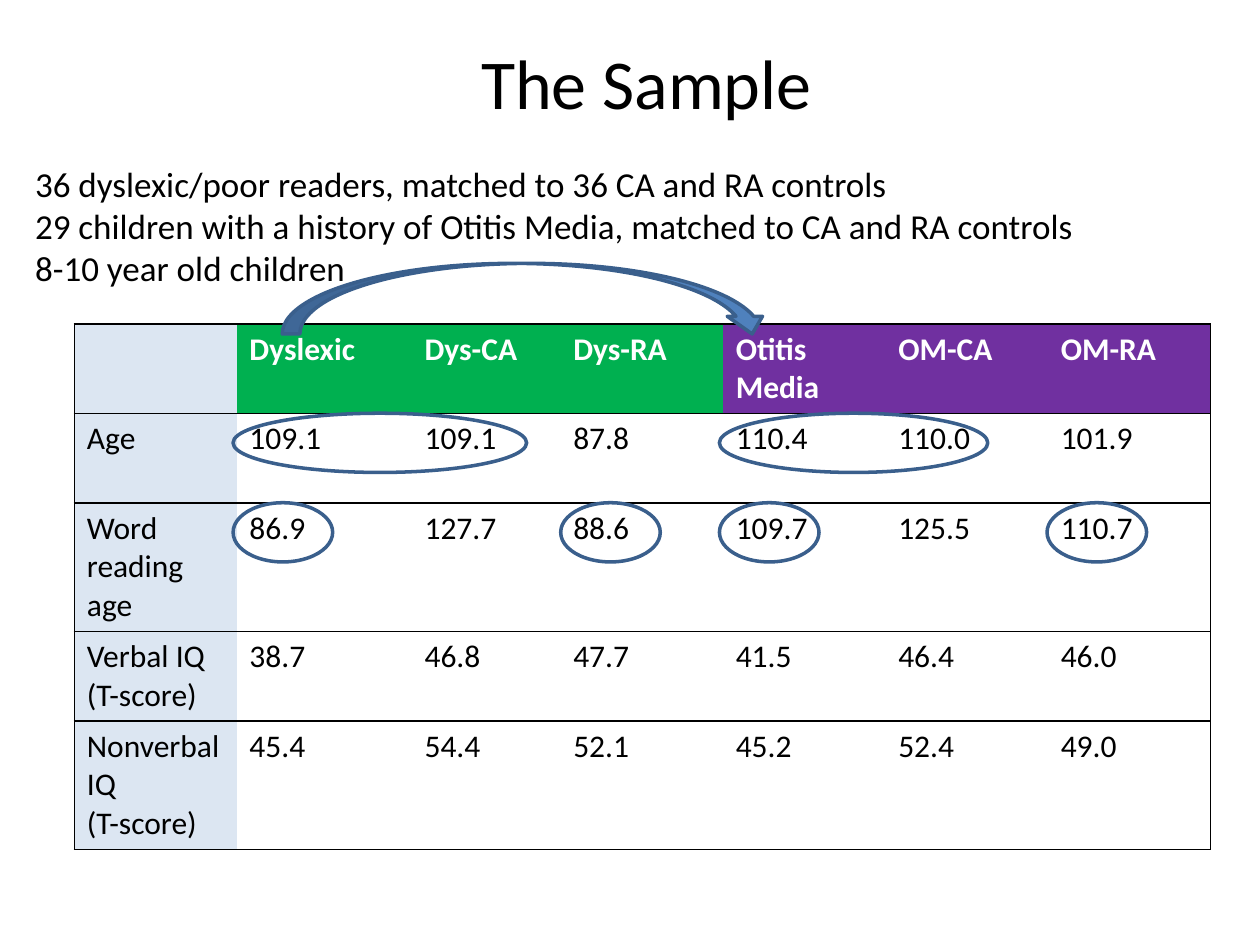
from dataclasses import dataclass
from itertools import accumulate

from lxml.etree import SubElement
from pptx import Presentation
from pptx.dml.color import RGBColor
from pptx.enum.shapes import MSO_SHAPE
from pptx.enum.text import MSO_ANCHOR, PP_ALIGN
from pptx.oxml.ns import qn
from pptx.util import Inches, Pt

WIDTH, HEIGHT = 10, 7.5
NO_GRID_STYLE = "{2D5ABB26-0587-4C30-8999-92F81FD0307C}"


@dataclass(frozen=True)
class Theme:
    font: str = "Calibri"
    ink: str = "000000"
    white: str = "FFFFFF"
    label: str = "DCE6F2"
    dyslexic: str = "00B050"
    otitis: str = "7030A0"
    outline: str = "3A5F8C"
    arrow: str = "4F81BD"
    title_size: int = 40
    body_size: int = 20
    table_size: int = 18
    border: int = 1
    outline_width: int = 2


@dataclass(frozen=True)
class Area:
    """A rectangle in percent of the slide's width and height."""
    left: float
    top: float
    width: float
    height: float

    def lengths(self) -> tuple:
        sides = (WIDTH, HEIGHT, WIDTH, HEIGHT)
        shares = (self.left, self.top, self.width, self.height)
        return tuple(Inches(side * share / 100) for side, share in zip(sides, shares))


@dataclass(frozen=True)
class Ring:
    """An ellipse around scores, placed by table row and column."""
    row: int
    column: int
    width: float = 0.79
    shift: float = -0.03


THEME = Theme()
TITLE_AREA = Area(6.3, 2.8, 90, 11.6)
INTRO_AREA = Area(1.8, 16.53, 97.9, 14.8)
ARROW_AREA = Area(22.4, 27.87, 38.7, 7.47)

INTRO = [
    "36 dyslexic/poor readers, matched to 36 CA and RA controls",
    "29 children with a history of Otitis Media, matched to CA and RA controls",
    "8-10 year old children",
]
ROWS = [
    ["", "Dyslexic", "Dys-CA", "Dys-RA", "Otitis Media", "OM-CA", "OM-RA"],
    ["Age", "109.1", "109.1", "87.8", "110.4", "110.0", "101.9"],
    ["Word reading age", "86.9", "127.7", "88.6", "109.7", "125.5", "110.7"],
    ["Verbal IQ\n(T-score)", "38.7", "46.8", "47.7", "41.5", "46.4", "46.0"],
    ["Nonverbal IQ\n(T-score)", "45.4", "54.4", "52.1", "45.2", "52.4", "49.0"],
]

# Table grid in inches: sizes, then the edges that follow from them
TABLE_LEFT, TABLE_TOP = 0.59, 2.57
COLUMN_WIDTHS = [1.29, 1.39, 1.18] + [1.29] * 4
ROW_HEIGHTS = [0.71, 0.71, 1.02, 0.71, 1.02]
COLUMN_EDGES = list(accumulate(COLUMN_WIDTHS, initial=TABLE_LEFT))
ROW_EDGES = list(accumulate(ROW_HEIGHTS, initial=TABLE_TOP))

RING_HEIGHT = 0.47
RINGS = [
    Ring(1, 1, width=2.33),
    Ring(1, 4, width=2.13),
    Ring(2, 1),
    Ring(2, 3, shift=0),
    Ring(2, 4),
    Ring(2, 6, shift=-0.01),
]


def write(frame, text: str, size: int, color: str = THEME.ink, bold: bool = False) -> None:
    """Fill a text frame, one paragraph for each line."""
    frame.text = text
    values = {"name": THEME.font, "size": Pt(size), "bold": bold}
    for para in frame.paragraphs:
        for span in para.runs:
            for name, value in values.items():
                setattr(span.font, name, value)
            span.font.color.rgb = RGBColor.from_string(color)


def add_borders(cell, sides: str) -> None:
    properties = cell._tc.get_or_add_tcPr()
    for side in sides:
        line = SubElement(properties, qn(f"a:ln{side}"), w=str(Pt(THEME.border)))
        fill = SubElement(line, qn("a:solidFill"))
        SubElement(fill, qn("a:srgbClr"), val=THEME.ink)


def cell_fill(row: int, column: int) -> str | None:
    if column == 0:
        return THEME.label
    if row == 0:
        return THEME.dyslexic if column <= 3 else THEME.otitis
    return None


def add_scores(page) -> None:
    frame = page.shapes.add_table(
        len(ROWS), len(COLUMN_WIDTHS), Inches(TABLE_LEFT), Inches(TABLE_TOP),
        Inches(sum(COLUMN_WIDTHS)), Inches(sum(ROW_HEIGHTS)))
    table = frame.table
    table._tbl.tblPr.find(qn("a:tableStyleId")).text = NO_GRID_STYLE
    table.horz_banding = False
    for column, width in zip(table.columns, COLUMN_WIDTHS):
        column.width = Inches(width)
    for row, height in zip(table.rows, ROW_HEIGHTS):
        row.height = Inches(height)

    last = len(COLUMN_WIDTHS) - 1
    for r, texts in enumerate(ROWS):
        for c, text in enumerate(texts):
            cell = table.cell(r, c)
            header = r == 0
            write(cell.text_frame, text, THEME.table_size,
                  THEME.white if header else THEME.ink, header)
            add_borders(cell, {0: "LTB", last: "RTB"}.get(c, "TB"))
            color = cell_fill(r, c)
            if color:
                cell.fill.solid()
                cell.fill.fore_color.rgb = RGBColor.from_string(color)
            else:
                cell.fill.background()


def add_outlined(page, kind: MSO_SHAPE, lengths: tuple, fill: str | None = None) -> None:
    shape = page.shapes.add_shape(kind, *lengths)
    shape.shadow.inherit = False
    shape.line.color.rgb = RGBColor.from_string(THEME.outline)
    shape.line.width = Pt(THEME.outline_width)
    if fill:
        shape.fill.solid()
        shape.fill.fore_color.rgb = RGBColor.from_string(fill)
    else:
        shape.fill.background()


def add_ring(page, ring: Ring) -> None:
    left = COLUMN_EDGES[ring.column] + ring.shift
    sizes = (left, ROW_EDGES[ring.row], ring.width, RING_HEIGHT)
    add_outlined(page, MSO_SHAPE.OVAL, tuple(map(Inches, sizes)))


def main() -> None:
    deck = Presentation()
    deck.slide_width, deck.slide_height = Inches(WIDTH), Inches(HEIGHT)
    page = deck.slides.add_slide(deck.slide_layouts[5])

    # Title
    title = page.shapes.title
    title.left, title.top, title.width, title.height = TITLE_AREA.lengths()
    write(title.text_frame, "The Sample", THEME.title_size)
    title.text_frame.vertical_anchor = MSO_ANCHOR.MIDDLE
    title.text_frame.paragraphs[0].alignment = PP_ALIGN.CENTER

    # Scores of each group
    add_scores(page)

    # Who took part
    box = page.shapes.add_textbox(*INTRO_AREA.lengths())
    box.text_frame.word_wrap = True
    write(box.text_frame, "\n".join(INTRO), THEME.body_size)

    # Matched scores and the link between the two groups
    for ring in RINGS:
        add_ring(page, ring)
    add_outlined(page, MSO_SHAPE.CURVED_DOWN_ARROW, ARROW_AREA.lengths(), THEME.arrow)

    deck.save("out.pptx")


if __name__ == "__main__":
    main()
